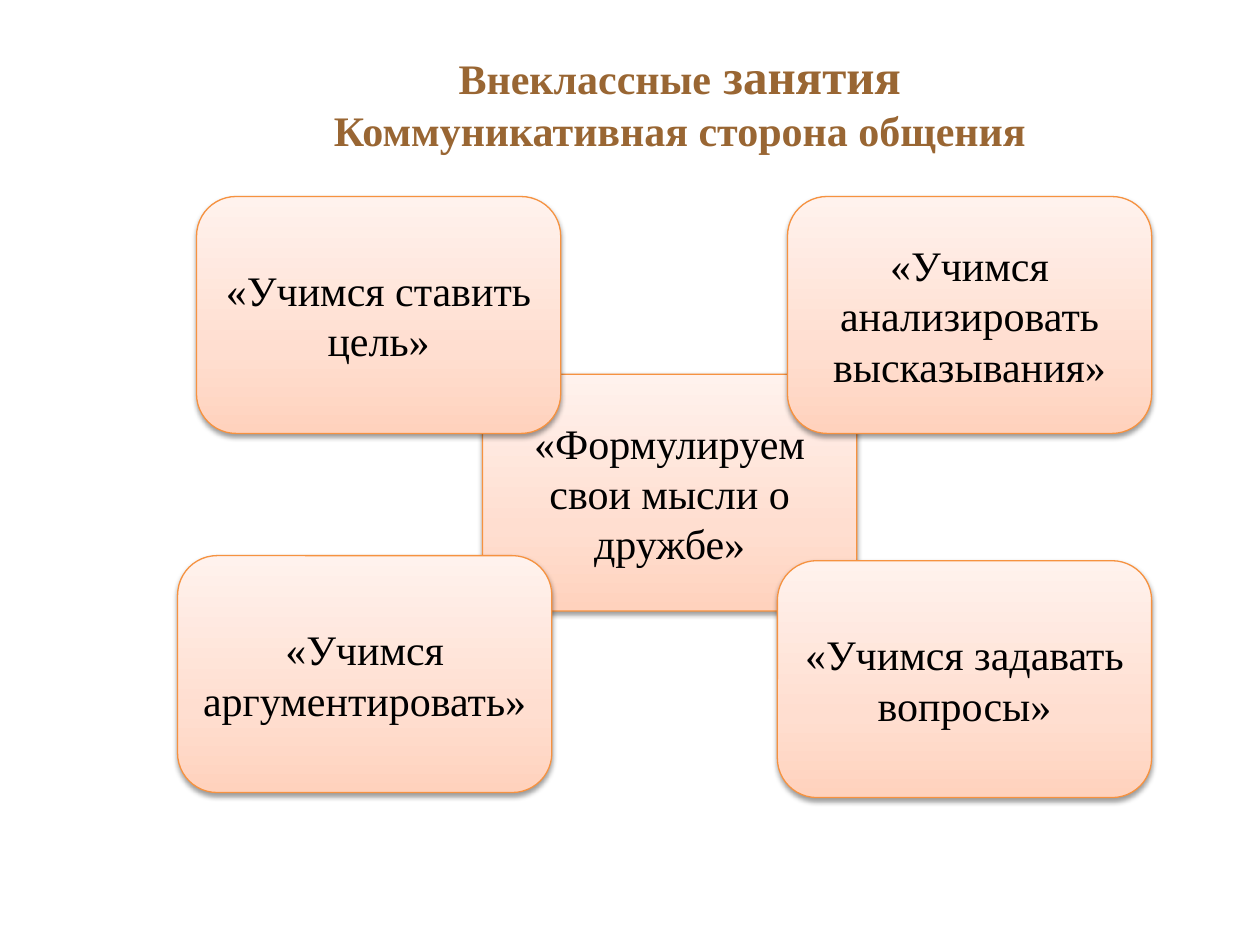
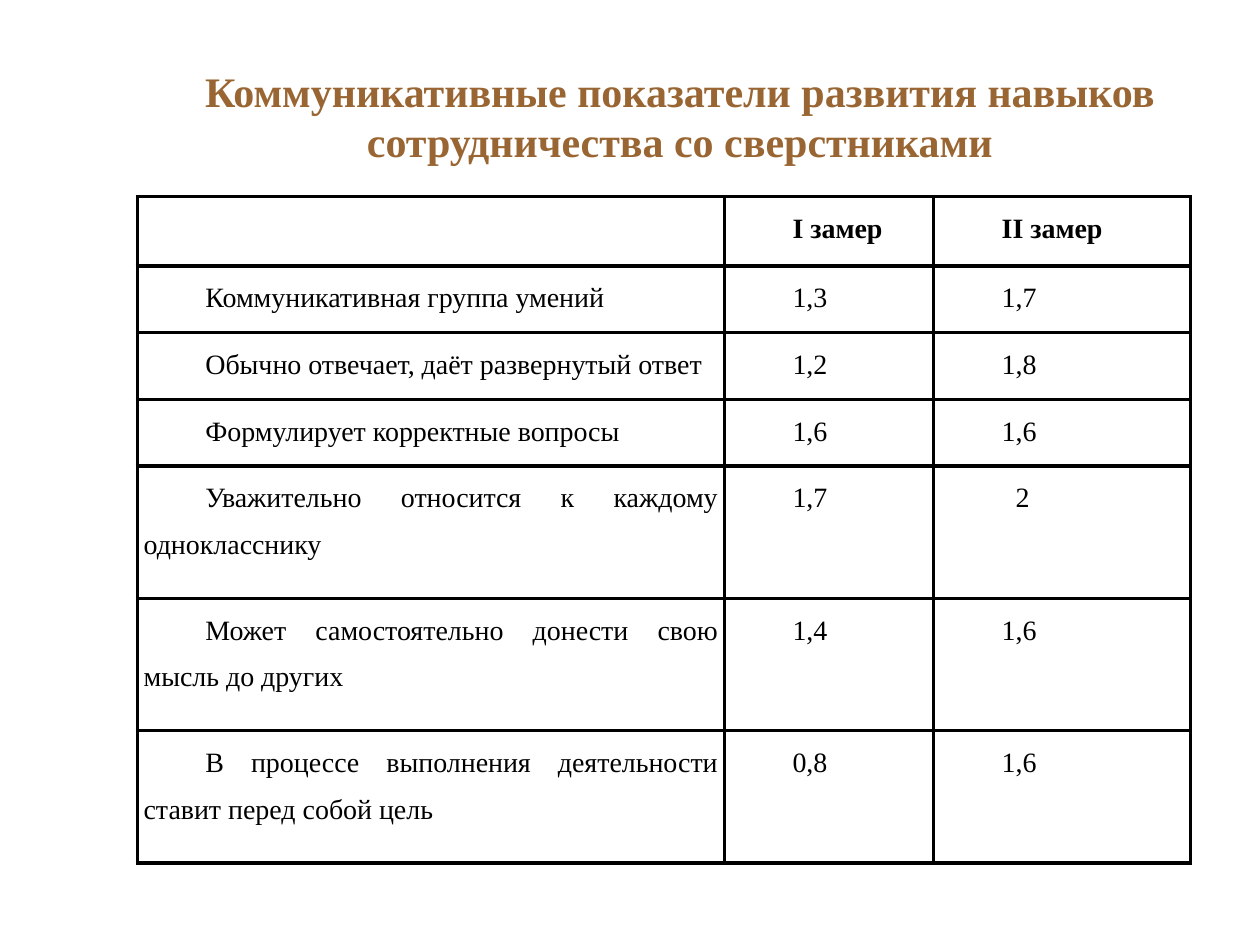
import pptx
import pptx.dml.color
import pptx.enum.shapes
import pptx.enum.text
import pptx.oxml
import pptx.oxml.ns
import pptx.util
from lxml import etree

Inches = pptx.util.Inches
Pt = pptx.util.Pt
ALIGN = pptx.enum.text.PP_ALIGN
qn = pptx.oxml.ns.qn

FONT = "Times New Roman"
COLORS = {
    "title": "996633",
    "text": "000000",
    "line": "F69240",
    "shadow": "000000",
    "border": "000000",
}
CARD_GRADIENT = [(0, "FFD2BD"), (35, "FFDED0"), (100, "FFF2ED")]
CARD_HEIGHT = 1.88

CARDS = [
    ("«Формулируем свои мысли о дружбе»", 3.83, 2.97, 2.97),
    ("«Учимся анализировать высказывания»", 6.25, 1.56, 2.89),
    ("«Учимся ставить цель»", 1.56, 1.56, 2.89),
    ("«Учимся аргументировать»", 1.41, 4.41, 2.97),
    ("«Учимся задавать вопросы»", 6.17, 4.45, 2.97),
]

MEASUREMENTS = [
    ("", "I замер", "II замер"),
    ("Коммуникативная группа умений", "1,3", "1,7"),
    ("Обычно отвечает, даёт развернутый ответ", "1,2", "1,8"),
    ("Формулирует корректные вопросы", "1,6", "1,6"),
    ("Уважительно относится к каждому однокласснику", "1,7", "2"),
    ("Может самостоятельно донести свою мысль до других", "1,4", "1,6"),
    ("В процессе выполнения деятельности ставит перед собой цель", "0,8", "1,6"),
]
COLUMN_WIDTHS = [4.66, 1.66, 2.04]
ROW_HEIGHTS = [0.55] + [0.53] * 3 + [1.05] * 3


def rgb(name):
    return pptx.dml.color.RGBColor.from_string(COLORS[name])


def format_run(r, size, color, bold=False):
    r.font.name = FONT
    r.font.size = Pt(size)
    r.font.bold = bold
    r.font.color.rgb = rgb(color)


def add_color(parent, value):
    return etree.SubElement(parent, qn("a:srgbClr"), val=value)


def add_title(slide, top, height, lines):
    s = slide.shapes.add_textbox(Inches(1.02), Inches(top), Inches(8.75), Inches(height))
    tf = s.text_frame
    tf.word_wrap = True
    for i, runs in enumerate(lines):
        p = tf.paragraphs[0] if i == 0 else tf.add_paragraph()
        p.alignment = ALIGN.CENTER
        for text, size in runs:
            r = p.add_run()
            r.text = text
            format_run(r, size, "title", True)


def fill_gradient(s, stops):
    s.fill.gradient()
    s.fill.gradient_angle = 90
    stop_list = s.fill._xPr.find(qn("a:gradFill")).find(qn("a:gsLst"))
    for stop in list(stop_list):
        stop_list.remove(stop)
    for position, color in stops:
        stop = etree.SubElement(stop_list, qn("a:gs"), pos=str(position * 1000))
        add_color(stop, color)


def add_shadow(s):
    s.shadow.inherit = False
    effects = s._element.spPr.find(qn("a:effectLst"))
    shadow = etree.SubElement(
        effects, qn("a:outerShdw"), blurRad=str(Pt(3.1)), dist=str(Pt(1.6)),
        dir="5400000", rotWithShape="0")
    etree.SubElement(add_color(shadow, COLORS["shadow"]), qn("a:alpha"), val="38000")


def add_card(slide, text, left, top, width):
    s = slide.shapes.add_shape(
        pptx.enum.shapes.MSO_SHAPE.ROUNDED_RECTANGLE,
        Inches(left), Inches(top), Inches(width), Inches(CARD_HEIGHT))
    fill_gradient(s, CARD_GRADIENT)
    s.line.color.rgb = rgb("line")
    s.line.width = Pt(0.75)
    add_shadow(s)
    tf = s.text_frame
    tf.word_wrap = True
    tf.vertical_anchor = pptx.enum.text.MSO_ANCHOR.MIDDLE
    tf.text = text
    p = tf.paragraphs[0]
    p.alignment = ALIGN.CENTER
    format_run(p.runs[0], 24, "text")


def add_borders(cell):
    tcPr = cell._tc.get_or_add_tcPr()
    for side in ("a:lnL", "a:lnR", "a:lnT", "a:lnB"):
        line = etree.SubElement(tcPr, qn(side), w=str(Pt(2.25)))
        add_color(etree.SubElement(line, qn("a:solidFill")), COLORS["border"])


def fill_cell(cell, text, bold):
    add_borders(cell)
    cell.fill.background()
    if not text:
        return
    cell.margin_left = cell.margin_right = Inches(0.05)
    cell.margin_top = Inches(0.01)
    cell.margin_bottom = 0
    cell.text_frame.text = text
    p = cell.text_frame.paragraphs[0]
    p.alignment = ALIGN.JUSTIFY
    p.line_spacing = 1.5
    indent = 0.6 if text == "2" else 0.49
    pPr = p._p.get_or_add_pPr()
    pPr.set("marL", "0")
    pPr.set("indent", str(Inches(indent)))
    format_run(p.runs[0], 16, "text", bold)


def add_measurement_table(slide):
    table = slide.shapes.add_table(
        len(ROW_HEIGHTS), len(COLUMN_WIDTHS), Inches(1.09), Inches(1.56),
        Inches(sum(COLUMN_WIDTHS)), Inches(sum(ROW_HEIGHTS))).table
    table.first_row = False
    table.horz_banding = False
    for column, width in zip(table.columns, COLUMN_WIDTHS):
        column.width = Inches(width)
    for i, (row, height, texts) in enumerate(zip(table.rows, ROW_HEIGHTS, MEASUREMENTS)):
        row.height = Inches(height)
        for cell, text in zip(row.cells, texts):
            fill_cell(cell, text, bold=i == 0)


def main():
    prs = pptx.Presentation()
    prs.slide_width = Inches(10)
    prs.slide_height = Inches(7.5)
    blank = prs.slide_layouts[6]

    slide = prs.slides.add_slide(blank)
    center_card, *corner_cards = CARDS
    add_card(slide, *center_card)
    add_title(slide, 0.31, 0.98, [
        [("Внеклассные", 24), (" занятия", 28)],
        [("Коммуникативная сторона общения", 24)],
    ])
    for card in corner_cards:
        add_card(slide, *card)

    slide = prs.slides.add_slide(blank)
    add_title(slide, 0.47, 0.91, [
        [("Коммуникативные показатели развития навыков сотрудничества со сверстниками", 24)],
    ])
    add_measurement_table(slide)

    prs.save("out.pptx")


if __name__ == "__main__":
    main()
